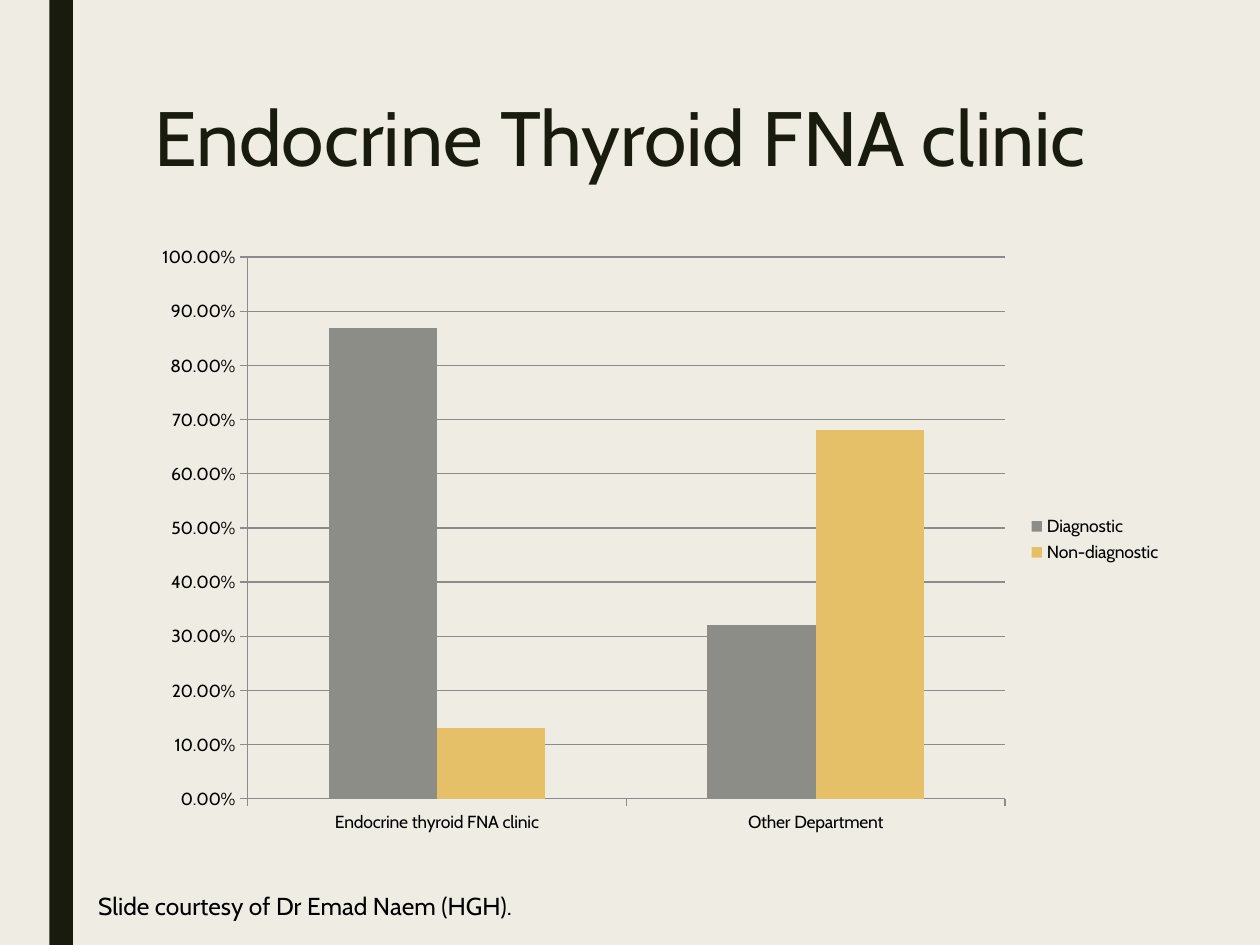
from dataclasses import dataclass

from pptx import Presentation
from pptx.chart.data import CategoryChartData
from pptx.dml.color import RGBColor
from pptx.enum.chart import XL_CHART_TYPE, XL_LEGEND_POSITION, XL_TICK_MARK
from pptx.enum.shapes import MSO_SHAPE
from pptx.enum.text import MSO_ANCHOR
from pptx.slide import Slide
from pptx.util import Pt

COLUMNS = XL_CHART_TYPE.COLUMN_CLUSTERED
LEGEND_RIGHT = XL_LEGEND_POSITION.RIGHT
TICK_OUTSIDE = XL_TICK_MARK.OUTSIDE
RECTANGLE = MSO_SHAPE.RECTANGLE
TOP = MSO_ANCHOR.TOP

FONT = "Cabin"
CREAM = RGBColor(0xEF, 0xED, 0xE3)
DARK = RGBColor(0x19, 0x1B, 0x0E)
BLACK = RGBColor(0, 0, 0)
GREY = RGBColor(0x8C, 0x8D, 0x86)
GOLD = RGBColor(0xE6, 0xC0, 0x69)
LINE_GREY = RGBColor(0x8B, 0x8B, 0x8B)


@dataclass
class Series:
    name: str
    values: tuple[float, ...]
    color: RGBColor


@dataclass
class Label:
    text: str
    left: float
    top: float
    width: float
    height: float
    size: float
    color: RGBColor
    line_spacing: float = 1.0


CATEGORIES = ("Endocrine thyroid FNA clinic", "Other Department")
SERIES = (
    Series("Diagnostic", (0.87, 0.32), GREY),
    Series("Non-diagnostic", (0.13, 0.68), GOLD),
)
LABELS = (
    Label("Endocrine Thyroid FNA clinic", 81, 54, 567, 117, 44, DARK, 0.89),
    Label("Slide courtesy of Dr Emad Naem (HGH).", 49, 505.5, 526, 24.5, 14, BLACK),
)


def add_side_bar(page: Slide) -> None:
    bar = page.shapes.add_shape(RECTANGLE, Pt(28.2), Pt(0), Pt(13.5), Pt(540))
    bar.shadow.inherit = False
    bar.fill.solid()
    bar.fill.fore_color.rgb = DARK
    bar.line.fill.background()


def add_label(page: Slide, label: Label) -> None:
    box = page.shapes.add_textbox(
        Pt(label.left), Pt(label.top), Pt(label.width), Pt(label.height)
    )
    frame = box.text_frame
    frame.word_wrap = True
    frame.vertical_anchor = TOP
    para = frame.paragraphs[0]
    para.line_spacing = label.line_spacing
    span = para.add_run()
    span.text = label.text
    span.font.name = FONT
    span.font.size = Pt(label.size)
    span.font.color.rgb = label.color


def add_result_chart(page: Slide) -> None:
    data = CategoryChartData(number_format="0%")
    data.categories = CATEGORIES
    for series in SERIES:
        data.add_series(series.name, series.values)
    chart = page.shapes.add_chart(
        COLUMNS, Pt(81), Pt(134), Pt(590), Pt(348.5), data
    ).chart
    chart.has_title = False
    chart.font.name = FONT
    chart.font.size = Pt(10)
    chart.font.color.rgb = BLACK
    chart.has_legend = True
    chart.legend.position = LEGEND_RIGHT
    chart.legend.include_in_layout = False

    for axis in (chart.category_axis, chart.value_axis):
        axis.major_tick_mark = TICK_OUTSIDE
        axis.format.line.color.rgb = LINE_GREY
        axis.format.line.width = Pt(0.75)
    scale = chart.value_axis
    scale.minimum_scale, scale.maximum_scale, scale.major_unit = 0, 1, 0.1
    scale.has_major_gridlines = True
    scale.major_gridlines.format.line.color.rgb = LINE_GREY
    scale.major_gridlines.format.line.width = Pt(0.75)
    scale.tick_labels.number_format = "0.00%"
    scale.tick_labels.number_format_is_linked = False

    plot = chart.plots[0]
    plot.gap_width = 150
    plot.overlap = 0
    plot.vary_by_categories = False
    for columns, series in zip(plot.series, SERIES):
        columns.format.fill.solid()
        columns.format.fill.fore_color.rgb = series.color


def main() -> None:
    deck = Presentation()
    deck.slide_width, deck.slide_height = Pt(720), Pt(540)
    page = deck.slides.add_slide(deck.slide_layouts[6])
    page.background.fill.solid()
    page.background.fill.fore_color.rgb = CREAM
    add_side_bar(page)
    title, credit = LABELS
    add_label(page, title)
    add_result_chart(page)
    add_label(page, credit)
    deck.save("out.pptx")


if __name__ == "__main__":
    main()
